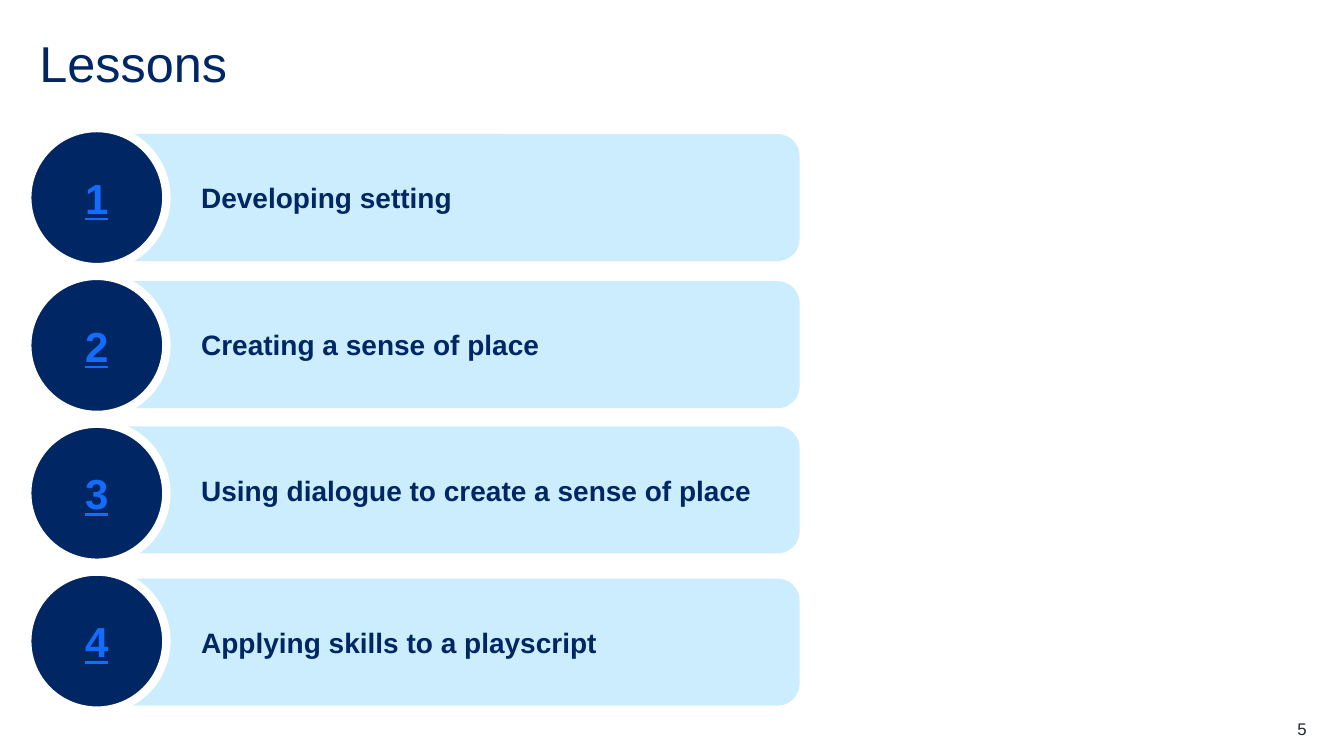
from dataclasses import dataclass

import pptx
import pptx.dml.color
import pptx.enum.shapes
import pptx.enum.text
import pptx.util

Inches = pptx.util.Inches
Pt = pptx.util.Pt
RGBColor = pptx.dml.color.RGBColor
Align = pptx.enum.text.PP_ALIGN
Anchor = pptx.enum.text.MSO_ANCHOR
Preset = pptx.enum.shapes.MSO_SHAPE

NAVY = RGBColor(0x00, 0x26, 0x64)
PALE_BLUE = RGBColor(0xCB, 0xED, 0xFD)
LINK_BLUE = RGBColor(0x14, 0x6C, 0xFD)
CHARCOAL = RGBColor(0x22, 0x27, 0x2B)
WHITE = RGBColor(0xFF, 0xFF, 0xFF)

TITLE_FORMAT = {"size": Pt(36), "color": NAVY}
LESSON_FORMAT = {"size": Pt(20), "color": NAVY, "bold": True}
NUMBER_FORMAT = {"size": Pt(30), "color": LINK_BLUE, "bold": True, "underline": True}
PAGE_FORMAT = {"size": Pt(12), "color": CHARCOAL}

BAR_LEFT, BAR_WIDTH, BAR_HEIGHT = 1.04, 6.89, 1.26
BAR_TEXT_MARGIN = 0.89
CIRCLE_LEFT, CIRCLE_SIZE = 0.27, 1.38
FIRST_CIRCLE_TOP, LAST_CIRCLE_TOP = 1.27, 5.67


@dataclass
class Lesson:
    title: str
    bar_top: float


LESSONS = [
    Lesson("Developing setting", 1.33),
    Lesson("Creating a sense of place", 2.79),
    Lesson("Using dialogue to create a sense of place", 4.23),
    Lesson("Applying skills to a playscript", 5.74),
]


def write_text(shape, text: str, text_format: dict, alignment=Align.LEFT):
    """Write one formatted paragraph into the shape and return it."""
    shape.text_frame.word_wrap = True
    paragraph = shape.text_frame.paragraphs[0]
    paragraph.alignment = alignment
    run = paragraph.add_run()
    run.text = text
    run.font.name = "Arial"
    for name, value in text_format.items():
        if name == "color":
            run.font.color.rgb = value
        else:
            setattr(run.font, name, value)
    return paragraph


def add_label(slide, box: tuple, text: str, text_format: dict, alignment=Align.LEFT):
    """Add a text box without margins and return its paragraph."""
    label = slide.shapes.add_textbox(*map(Inches, box))
    for side in ("left", "top", "right", "bottom"):
        setattr(label.text_frame, f"margin_{side}", 0)
    return write_text(label, text, text_format, alignment)


def add_filled_shape(group, preset, box: tuple, fill: RGBColor):
    shape = group.shapes.add_shape(preset, *map(Inches, box))
    shape.shadow.inherit = False
    shape.fill.solid()
    shape.fill.fore_color.rgb = fill
    shape.line.fill.background()
    shape.text_frame.vertical_anchor = Anchor.MIDDLE
    return shape


def add_lesson(slide, number: int, lesson: Lesson, circle_top: float) -> None:
    group = slide.shapes.add_group_shape()
    bar_box = (BAR_LEFT, lesson.bar_top, BAR_WIDTH, BAR_HEIGHT)
    bar = add_filled_shape(group, Preset.ROUNDED_RECTANGLE, bar_box, PALE_BLUE)
    bar.adjustments[0] = 0.173
    bar.text_frame.margin_left = Inches(BAR_TEXT_MARGIN)
    write_text(bar, lesson.title, LESSON_FORMAT)

    circle_box = (CIRCLE_LEFT, circle_top, CIRCLE_SIZE, CIRCLE_SIZE)
    circle = add_filled_shape(group, Preset.OVAL, circle_box, NAVY)
    circle.line.color.rgb = WHITE
    circle.line.width = Pt(6)
    write_text(circle, str(number), NUMBER_FORMAT, Align.CENTER)


def main() -> None:
    presentation = pptx.Presentation()
    presentation.slide_width = Inches(13.33)
    presentation.slide_height = Inches(7.5)
    slide = presentation.slides.add_slide(presentation.slide_layouts[6])

    title = add_label(slide, (0.39, 0.39, 12.56, 0.6), "Lessons", TITLE_FORMAT)
    title.line_spacing = 0.9

    circle_pitch = (LAST_CIRCLE_TOP - FIRST_CIRCLE_TOP) / (len(LESSONS) - 1)
    for index, lesson in enumerate(LESSONS):
        add_lesson(slide, index + 1, lesson, FIRST_CIRCLE_TOP + index * circle_pitch)

    add_label(slide, (12.17, 7.13, 0.79, 0.2), "5", PAGE_FORMAT, Align.RIGHT)
    presentation.save("out.pptx")


if __name__ == "__main__":
    main()
